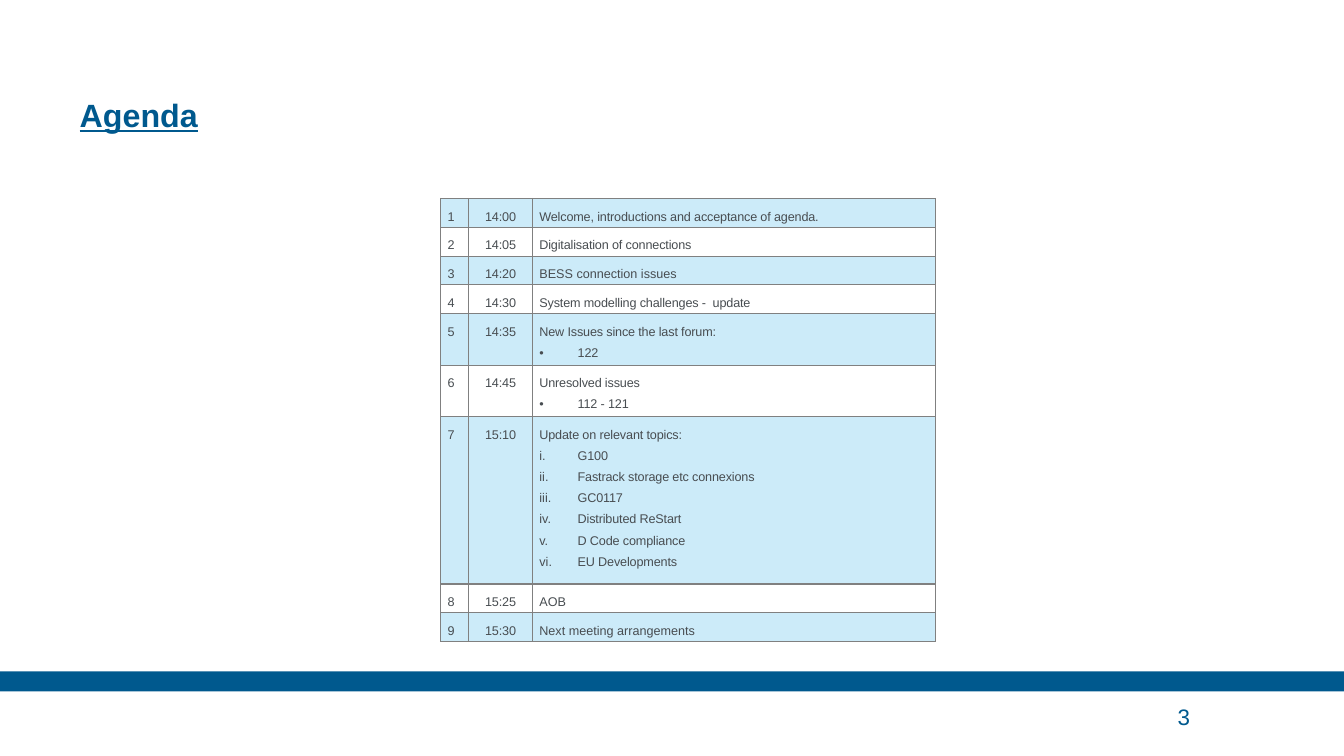
from lxml.etree import SubElement
from pptx import Presentation
from pptx.dml.color import RGBColor
from pptx.enum.shapes import MSO_SHAPE
from pptx.enum.text import MSO_ANCHOR, PP_ALIGN
from pptx.oxml.ns import qn
from pptx.util import Inches, Pt

RECT = MSO_SHAPE.RECTANGLE
LEFT, MID = PP_ALIGN.LEFT, PP_ALIGN.CENTER
LOW, CORE = MSO_ANCHOR.BOTTOM, MSO_ANCHOR.MIDDLE

HUES = {"navy": "00598E", "sky": "009FE3", "text": "484D51", "rule": "808080"}
FACE = "Arial"
DOT = ("buChar", "char", "•")
ROMAN = ("buAutoNum", "type", "romanLcPeriod")
TITLE = "Agenda"
PAGE = "3"
ITEMS = [
    ("14:00", "Welcome, introductions and acceptance of agenda.", None, []),
    ("14:05", "Digitalisation of connections", None, []),
    ("14:20", "BESS connection issues", None, []),
    ("14:30", "System modelling challenges -  update", None, []),
    ("14:35", "New Issues since the last forum:", DOT, ["122"]),
    ("14:45", "Unresolved issues", DOT, ["112 - 121"]),
    ("15:10", "Update on relevant topics:", ROMAN, [
        "G100", "Fastrack storage etc connexions", "GC0117",
        "Distributed ReStart", "D Code compliance", "EU Developments"]),
    ("15:25", "AOB", None, []),
    ("15:30", "Next meeting arrangements", None, []),
]
LOOSE = {"1", "2", "BESS connection issues", "AOB", "Next meeting arrangements"}
COLS = [0.28, 0.63, 4]
ROWS = {0: 0.28, 1: 0.51, 6: 1.66}
INDENT = 0.38


def add_run(para, text, size, hue, bold=False):
    run = para.add_run()
    run.text = text
    font = run.font
    font.name, font.size, font.bold = FACE, Pt(size), bold
    font.color.rgb = RGBColor.from_string(HUES[hue])
    return run


def set_frame(frame, anchor):
    frame.word_wrap = True
    frame.vertical_anchor = anchor
    frame.margin_left = frame.margin_right = 0
    frame.margin_top = frame.margin_bottom = 0
    return frame.paragraphs[0]


def add_mark(para, mark):
    tag, key, value = mark
    props = para._p.get_or_add_pPr()
    props.set("marL", str(Inches(INDENT)))
    props.set("indent", str(-Inches(INDENT)))
    SubElement(props, qn("a:buFont")).set("typeface", FACE)
    SubElement(props, qn("a:" + tag)).set(key, value)


def add_rules(cell):
    props = cell._tc.get_or_add_tcPr()
    for side in "LRTB":
        line = SubElement(props, qn("a:ln" + side))
        line.set("w", str(Pt(1)))
        fill = SubElement(line, qn("a:solidFill"))
        SubElement(fill, qn("a:srgbClr")).set("val", HUES["rule"])


def tint(cell, shade):
    if not shade:
        cell.fill.background()
        return
    cell.fill.solid()
    cell.fill.fore_color.rgb = RGBColor.from_string(HUES["sky"])
    color = cell._tc.tcPr.find(qn("a:solidFill")).find(qn("a:srgbClr"))
    SubElement(color, qn("a:alpha")).set("val", "20000")


def fill_cell(cell, lines, mark, align, shade):
    cell.margin_left = cell.margin_right = Inches(0.07)
    cell.margin_top, cell.margin_bottom = Inches(0.04), Inches(0.02)
    add_rules(cell)
    tint(cell, shade)
    frame = cell.text_frame
    for i, text in enumerate(lines):
        para = frame.add_paragraph() if i else frame.paragraphs[0]
        para.alignment, para.line_spacing = align, 1.5
        if i:
            add_mark(para, mark)
        run = add_run(para, text, 9, "text")
        if text not in LOOSE:
            run._r.get_or_add_rPr().set("spc", "-10")


def add_agenda(slide):
    sizes = [ROWS[len(item[3])] for item in ITEMS]
    box = slide.shapes.add_table(
        len(ITEMS), len(COLS), Inches(4.37), Inches(1.97),
        Inches(sum(COLS)), Inches(sum(sizes)))
    table = box.table
    table.first_row = table.horz_banding = False
    for col, width in zip(table.columns, COLS):
        col.width = Inches(width)
    for r, (time, topic, mark, points) in enumerate(ITEMS):
        table.rows[r].height = Inches(sizes[r])
        parts = [[str(r + 1)], [time], [topic] + points]
        for c, lines in enumerate(parts):
            align = MID if c == 1 else LEFT
            fill_cell(table.cell(r, c), lines, mark, align, r % 2 == 0)


def main():
    deck = Presentation()
    deck.slide_width, deck.slide_height = Inches(13.33), Inches(7.5)
    slide = deck.slides.add_slide(deck.slide_layouts[5])
    shapes = slide.shapes

    band = shapes.add_shape(RECT, 0, Inches(6.66), deck.slide_width, Inches(0.2))
    band.shadow.inherit = False
    band.fill.solid()
    band.fill.fore_color.rgb = RGBColor.from_string(HUES["navy"])
    band.line.fill.background()

    title = shapes.title
    title.left, title.top = Inches(0.79), Inches(0.31)
    title.width, title.height = Inches(9.84), Inches(1.02)
    para = set_frame(title.text_frame, LOW)
    para.alignment, para.line_spacing = LEFT, Pt(30)
    add_run(para, TITLE, 23, "navy", True).font.underline = True

    page = shapes.add_textbox(Inches(11.68), Inches(6.91), Inches(1.23), Inches(0.39))
    add_run(set_frame(page.text_frame, CORE), PAGE, 16, "navy")

    add_agenda(slide)
    deck.save("out.pptx")


if __name__ == "__main__":
    main()
